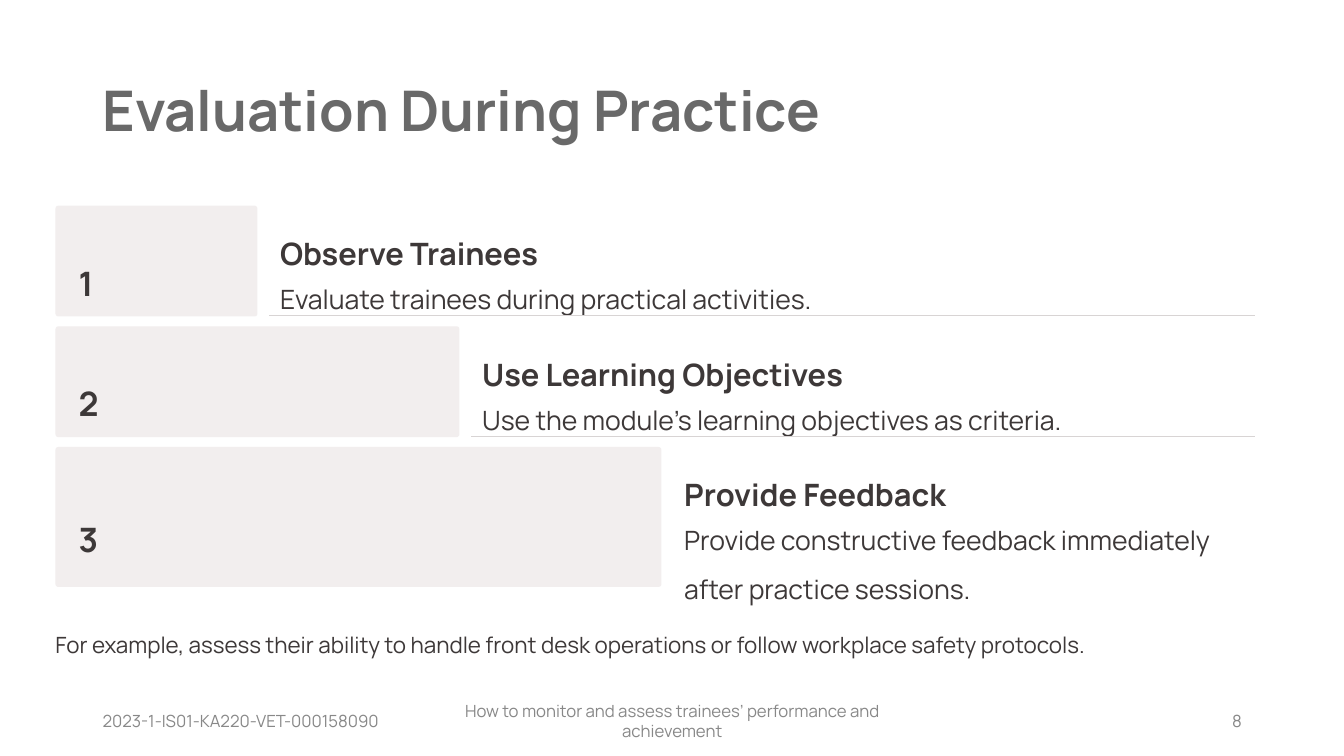
from dataclasses import dataclass

import pptx
import pptx.dml.color
import pptx.enum.shapes
import pptx.enum.text
import pptx.oxml.ns
import pptx.util
from lxml import etree

Pt = pptx.util.Pt
ALIGN = pptx.enum.text.PP_ALIGN
ANCHOR = pptx.enum.text.MSO_ANCHOR


@dataclass(frozen=True)
class Theme:
    font: str = "Manrope"
    title: str = "696969"
    ink: str = "3D3838"
    footer: str = "888888"
    panel: str = "F2EEEE"
    rule: str = "D8D4D4"
    title_size: float = 40
    number_size: float = 24
    heading_size: float = 22
    body_size: float = 19
    example_size: float = 16
    footer_size: float = 12


THEME = Theme()

LEFT = 39.6
RIGHT = 896.4
STEPS_TOP = 146.9
STEP_WIDTH = 144.3
STEP_GAP = 7
CORNER = 2.1

STEPS = [
    ("Observe Trainees", "Evaluate trainees during practical activities.", 79.2),
    ("Use Learning Objectives", "Use the module's learning objectives as criteria.", 79.2),
    ("Provide Feedback", "Provide constructive feedback immediately after practice sessions.", 100),
]

FOOTERS = [
    (66.2, 216, "2023-1-IS01-KA220-VET-000158090", ALIGN.LEFT),
    (318.2, 324, "How to monitor and assess trainees’ performance and achievement", ALIGN.CENTER),
    (678.2, 216, "8", ALIGN.RIGHT),
]


def rgb(value):
    return pptx.dml.color.RGBColor.from_string(value)


def write(frame, text, size, color, bold=False, align=ALIGN.LEFT, spacing=1.0):
    frame.text = text
    frame.word_wrap = True
    paragraph = frame.paragraphs[0]
    paragraph.alignment = align
    paragraph.line_spacing = spacing
    font = paragraph.runs[0].font
    font.name = THEME.font
    font.size = Pt(size)
    font.bold = bold
    font.color.rgb = rgb(color)


def add_label(slide, left, top, width, height, text, size, **style):
    label = slide.shapes.add_textbox(Pt(left), Pt(top), Pt(width), Pt(height))
    frame = label.text_frame
    frame.margin_left = frame.margin_right = frame.margin_top = frame.margin_bottom = 0
    write(frame, text, size, THEME.ink, **style)


def add_panel(slide, left, top, width, height):
    panel = slide.shapes.add_shape(
        pptx.enum.shapes.MSO_SHAPE.ROUNDED_RECTANGLE, Pt(left), Pt(top), Pt(width), Pt(height)
    )
    panel.adjustments[0] = CORNER / height
    panel.shadow.inherit = False
    panel.fill.solid()
    panel.fill.fore_color.rgb = rgb(THEME.panel)
    panel.line.fill.background()


def add_rule(slide, left, top):
    rule = slide.shapes.add_connector(
        pptx.enum.shapes.MSO_CONNECTOR.STRAIGHT, Pt(left), Pt(top), Pt(RIGHT), Pt(top)
    )
    rule.line.color.rgb = rgb(THEME.rule)
    rule.line.width = Pt(0.75)
    etree.SubElement(rule.element.spPr, pptx.oxml.ns.qn("a:effectLst"))


def add_step(slide, number, top, heading, body, height):
    panel_width = STEP_WIDTH * number
    panel_right = LEFT + panel_width
    text_left = panel_right + 16.2
    text_width = RIGHT - text_left
    add_panel(slide, LEFT, top, panel_width, height)
    add_label(slide, LEFT + 16.6, top + (height - 26.6) / 2, 20, 26.6, str(number),
              THEME.number_size, bold=True, spacing=1.5)
    add_label(slide, text_left, top + 14.2, text_width, 20.2, heading,
              THEME.heading_size, bold=True, spacing=1.25)
    add_label(slide, text_left, top + 43.2, text_width, height - 50, body,
              THEME.body_size, spacing=1.53)
    if number < len(STEPS):
        add_rule(slide, panel_right + 8.3, top + 78.5)


def add_footer(slide, left, width, text, align):
    footer = slide.shapes.add_textbox(Pt(left), Pt(500.4), Pt(width), Pt(28.8))
    footer.text_frame.vertical_anchor = ANCHOR.MIDDLE
    write(footer.text_frame, text, THEME.footer_size, THEME.footer, align=align)


def format_title(slide, text):
    title = slide.shapes.title
    title.left, title.top, title.width, title.height = Pt(66.2), Pt(28.8), Pt(685.4), Pt(104.4)
    title.text_frame.vertical_anchor = ANCHOR.MIDDLE
    title.text_frame.auto_size = pptx.enum.text.MSO_AUTO_SIZE.NONE
    write(title.text_frame, text, THEME.title_size, THEME.title,
          bold=True, align=ALIGN.JUSTIFY, spacing=0.9)


def main():
    deck = pptx.Presentation()
    deck.slide_width, deck.slide_height = Pt(960), Pt(540)
    slide = deck.slides.add_slide(deck.slide_layouts[5])
    format_title(slide, "Evaluation During Practice")
    top = STEPS_TOP
    for number, (heading, body, height) in enumerate(STEPS, start=1):
        add_step(slide, number, top, heading, body, height)
        top += height + STEP_GAP
    add_label(
        slide, LEFT, 435.6, 865.4, 21.6,
        "For example, assess their ability to handle front desk operations "
        "or follow workplace safety protocols.",
        THEME.example_size, spacing=1.81,
    )
    for left, width, text, align in FOOTERS:
        add_footer(slide, left, width, text, align)
    deck.save("out.pptx")


if __name__ == "__main__":
    main()
